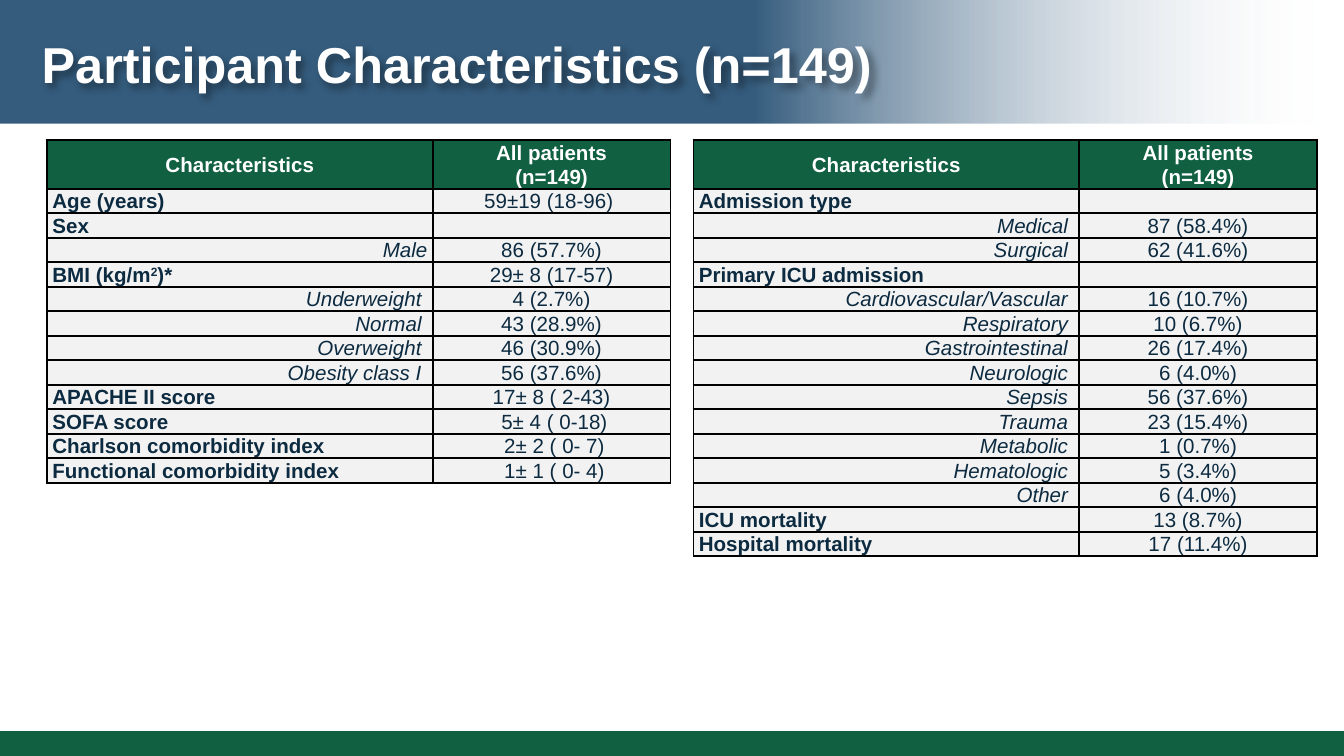
from lxml import etree
from pptx import Presentation
from pptx.dml.color import RGBColor
from pptx.enum.shapes import MSO_SHAPE
from pptx.enum.text import MSO_ANCHOR, MSO_AUTO_SIZE, PP_ALIGN
from pptx.oxml.ns import qn
from pptx.util import Inches, Pt

RECTANGLE = MSO_SHAPE.RECTANGLE
TOP, MIDDLE, BOTTOM = MSO_ANCHOR.TOP, MSO_ANCHOR.MIDDLE, MSO_ANCHOR.BOTTOM
LEFT, CENTER, RIGHT = PP_ALIGN.LEFT, PP_ALIGN.CENTER, PP_ALIGN.RIGHT
NO_AUTOFIT = MSO_AUTO_SIZE.NONE

COLORS = {
    "navy": "113F66",
    "green": "106041",
    "text": "0C2A40",
    "row": "F2F2F2",
    "white": "FFFFFF",
    "black": "000000",
}
FONT = "Arial"
SLIDE_WIDTH = Inches(10)
SLIDE_HEIGHT = SLIDE_WIDTH * 9 // 16
TABLE_TOP = 1.04
COLUMN_WIDTHS = (2.87, 1.77)
HEADER_HEIGHT, ROW_HEIGHT = 0.25, 0.12
HEADER = ("Characteristics", "All patients\n(n=149)")

GROUP, ITEM = "group", "item"
PATIENT_ROWS = [
    (GROUP, "Age (years)", "59±19 (18-96) "),
    (GROUP, "Sex", ""),
    (ITEM, "Male", "86 (57.7%)"),
    (GROUP, "BMI (kg/m^2^)*", "29± 8 (17-57)"),
    (ITEM, "Underweight ", "4 (2.7%)"),
    (ITEM, "Normal ", "43 (28.9%)"),
    (ITEM, "Overweight ", "46 (30.9%)"),
    (ITEM, "Obesity class I ", "56 (37.6%)"),
    (GROUP, "APACHE II score", "17± 8 ( 2-43)"),
    (GROUP, "SOFA score", " 5± 4 ( 0-18)"),
    (GROUP, "Charlson comorbidity index", " 2± 2 ( 0- 7)"),
    (GROUP, "Functional comorbidity index", " 1± 1 ( 0- 4)"),
]
ADMISSION_ROWS = [
    (GROUP, "Admission type", ""),
    (ITEM, "Medical ", "87 (58.4%)"),
    (ITEM, "Surgical ", "62 (41.6%)"),
    (GROUP, "Primary ICU admission", ""),
    (ITEM, "Cardiovascular/Vascular ", "16 (10.7%)"),
    (ITEM, "Respiratory ", "10 (6.7%)"),
    (ITEM, "Gastrointestinal ", "26 (17.4%)"),
    (ITEM, "Neurologic ", "6 (4.0%)"),
    (ITEM, "Sepsis ", "56 (37.6%)"),
    (ITEM, "Trauma ", "23 (15.4%)"),
    (ITEM, "Metabolic ", "1 (0.7%)"),
    (ITEM, "Hematologic ", "5 (3.4%)"),
    (ITEM, "Other ", "6 (4.0%)"),
    (GROUP, "ICU mortality", "13 (8.7%)"),
    (GROUP, "Hospital mortality", "17 (11.4%)"),
]


def rgb(name):
    return RGBColor.from_string(COLORS[name])


def set_alpha(color_element, percent):
    etree.SubElement(color_element, qn("a:alpha"), val=str(percent * 1000))


def add_band(slide, top, height, color):
    shape = slide.shapes.add_shape(RECTANGLE, 0, top, SLIDE_WIDTH, height)
    shape.shadow.inherit = False
    shape.line.fill.background()
    shape.fill.solid()
    shape.fill.fore_color.rgb = rgb(color)
    return shape


def fade_band(shape):
    shape.fill.gradient()
    shape.fill.gradient_angle = 0
    fades = ((0.56, "navy", 84), (1, "white", 0))
    for stop, (position, color, _) in zip(shape.fill.gradient_stops, fades):
        stop.position = position
        stop.color.rgb = rgb(color)
    elements = shape._element.spPr.iter(qn("a:srgbClr"))
    for element, (_, _, alpha) in zip(list(elements), fades):
        set_alpha(element, alpha)


def format_font(font, size, color, bold=False, italic=False):
    font.name = FONT
    font.size = Pt(size)
    font.bold = bold
    font.italic = italic
    font.color.rgb = rgb(color)


def add_shadow(shape):
    effects = etree.SubElement(shape._element.spPr, qn("a:effectLst"))
    shadow = etree.SubElement(
        effects, qn("a:outerShdw"), blurRad="50800", dist="38100", dir="2700000"
    )
    color = etree.SubElement(shadow, qn("a:srgbClr"), val=COLORS["black"])
    set_alpha(color, 40)


def set_title(slide, text):
    title = slide.shapes.title
    title.left, title.top = Inches(0.21), Inches(0)
    title.width, title.height = Inches(7.06), Inches(0.94)
    title.fill.background()
    add_shadow(title)
    frame = title.text_frame
    frame.text = text
    frame.word_wrap = True
    frame.auto_size = NO_AUTOFIT
    frame.vertical_anchor = MIDDLE
    paragraph = frame.paragraphs[0]
    paragraph.alignment = LEFT
    format_font(paragraph.runs[0].font, 27, "white", bold=True)
    slide.shapes._spTree.append(title._element)


def set_borders(cell):
    properties = cell._tc.get_or_add_tcPr()
    for index, side in enumerate(("lnL", "lnR", "lnT", "lnB")):
        line = etree.Element(qn(f"a:{side}"), w=str(Pt(1)))
        fill = etree.SubElement(line, qn("a:solidFill"))
        etree.SubElement(fill, qn("a:srgbClr"), val=COLORS["black"])
        properties.insert(index, line)


def fill_cell(cell, text, fill, color, alignment, anchor, bold=False, italic=False):
    cell.fill.solid()
    cell.fill.fore_color.rgb = rgb(fill)
    set_borders(cell)
    cell.margin_left = cell.margin_right = Inches(0.04)
    cell.margin_top = cell.margin_bottom = 0
    cell.vertical_anchor = anchor
    frame = cell.text_frame
    if not text:
        etree.SubElement(frame.paragraphs[0]._p, qn("a:endParaRPr"), sz="1000")
        return
    for index, line in enumerate(text.split("\n")):
        paragraph = frame.add_paragraph() if index else frame.paragraphs[0]
        paragraph.alignment = alignment
        paragraph.line_spacing = 1.07
        for part, piece in enumerate(line.split("^")):
            run = paragraph.add_run()
            run.text = piece
            format_font(run.font, 11, color, bold, italic)
            if part % 2:
                run._r.get_or_add_rPr().set("baseline", "30000")


def add_characteristics_table(slide, left, rows):
    height = HEADER_HEIGHT + ROW_HEIGHT * len(rows)
    table = slide.shapes.add_table(
        len(rows) + 1, 2, Inches(left), Inches(TABLE_TOP),
        Inches(sum(COLUMN_WIDTHS)), Inches(height),
    ).table
    table.horz_banding = False
    for column, width in zip(table.columns, COLUMN_WIDTHS):
        column.width = Inches(width)
    for index, row in enumerate(table.rows):
        row.height = Inches(ROW_HEIGHT if index else HEADER_HEIGHT)
    for column, text in enumerate(HEADER):
        fill_cell(table.cell(0, column), text, "green", "white", CENTER, MIDDLE, bold=True)
    for index, (kind, label, value) in enumerate(rows, start=1):
        is_item = kind == ITEM
        fill_cell(
            table.cell(index, 0), label, "row", "text",
            RIGHT if is_item else LEFT, BOTTOM if is_item else TOP,
            bold=not is_item, italic=is_item,
        )
        fill_cell(table.cell(index, 1), value, "row", "text", CENTER, MIDDLE)


def main():
    presentation = Presentation()
    presentation.slide_width = SLIDE_WIDTH
    presentation.slide_height = SLIDE_HEIGHT
    slide = presentation.slides.add_slide(presentation.slide_layouts[5])
    fade_band(add_band(slide, 0, Inches(0.92), "navy"))
    body_top, footer_top = Inches(0.93), Inches(5.44)
    body = add_band(slide, body_top, SLIDE_HEIGHT - body_top, "white")
    set_alpha(body._element.spPr.find(".//" + qn("a:srgbClr")), 95)
    add_band(slide, footer_top, SLIDE_HEIGHT - footer_top, "green")
    set_title(slide, "Participant Characteristics (n=149)")
    add_characteristics_table(slide, 0.35, PATIENT_ROWS)
    add_characteristics_table(slide, 5.16, ADMISSION_ROWS)
    presentation.save("out.pptx")


if __name__ == "__main__":
    main()
